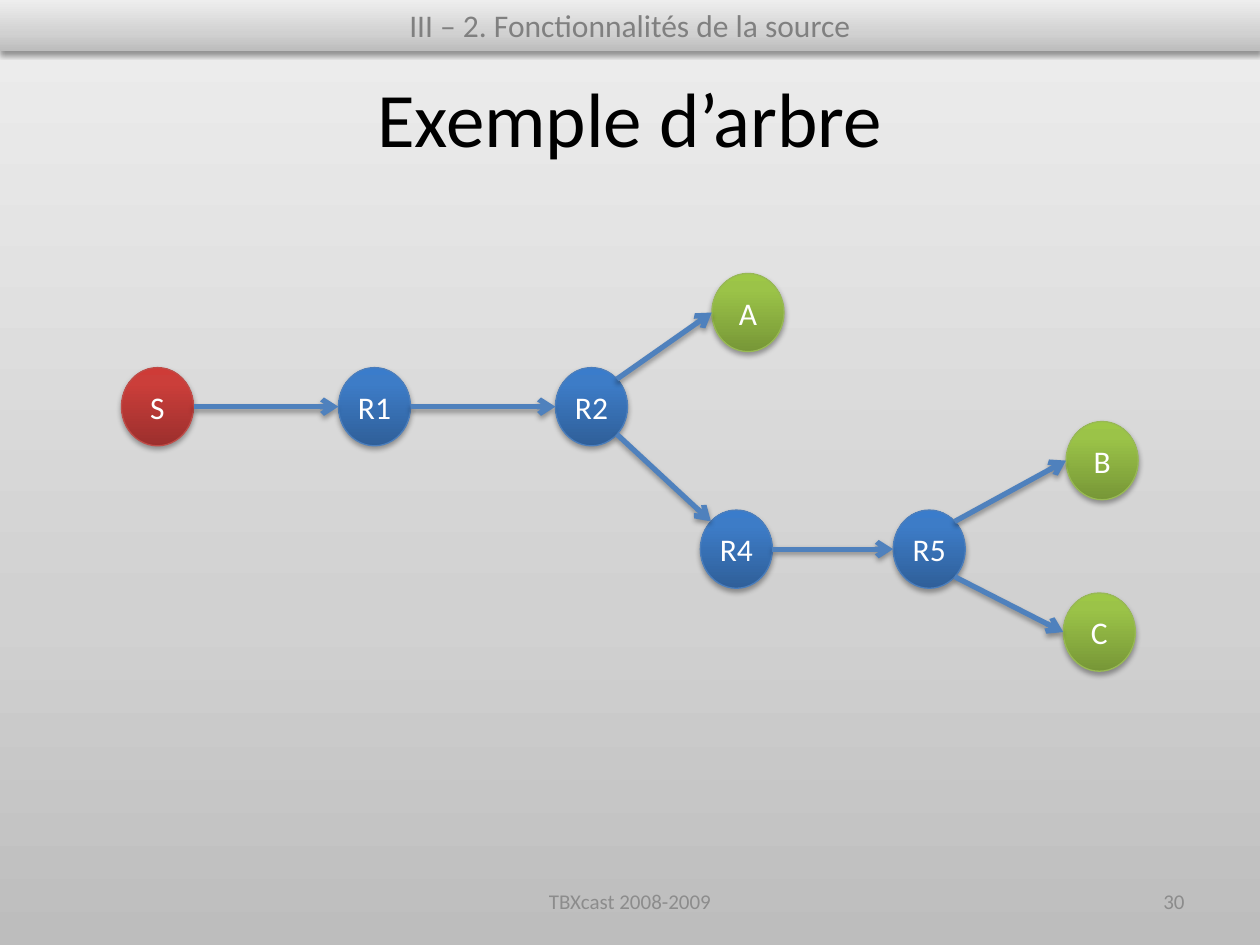
from copy import deepcopy
from math import cos, radians, sin

from lxml.etree import SubElement
from pptx import Presentation
from pptx.dml.color import RGBColor
from pptx.enum.shapes import MSO_CONNECTOR, MSO_SHAPE
from pptx.enum.text import MSO_ANCHOR, MSO_AUTO_SIZE, PP_ALIGN
from pptx.oxml.ns import qn
from pptx.util import Pt

COLORS = {
    "title": "000000", "footer": "8C8C8C", "header": "808080",
    "node text": "FFFFFF", "arrow": "4F81BD", "shadow": "000000",
    "source line": "BF4C48", "router line": "4B7EBC", "receiver line": "98B955",
}
# Gradient stops run from the bottom up: position in percent, color
GRADIENTS = {
    "grey": [(0, "BDBDBD"), (35, "D1D1D1"), (100, "EEEEEE")],
    "source": [(0, "9C2F2D"), (80, "CB3E3A"), (100, "CE3B37")],
    "router": [(0, "2F5F99"), (80, "3D7CC7"), (100, "3A7CCB")],
    "receiver": [(0, "779737"), (80, "9BC348"), (100, "9DC746")],
}


def write_text(shape, text, size, color, align=PP_ALIGN.CENTER,
               anchor=MSO_ANCHOR.MIDDLE, wrap=True):
    frame = shape.text_frame
    frame.text = text
    frame.word_wrap = wrap
    frame.vertical_anchor = anchor
    paragraph = frame.paragraphs[0]
    paragraph.alignment = align
    font = paragraph.runs[0].font
    font.name, font.size = "Calibri", Pt(size)
    font.color.rgb = RGBColor.from_string(COLORS[color])


def fill_gradient(fill, element, name):
    fill.gradient()
    fill.gradient_angle = 90
    stop_list = element.xpath(".//a:gsLst")[0]
    stop_list.append(deepcopy(stop_list[-1]))
    for stop, (position, color) in zip(fill.gradient_stops, GRADIENTS[name]):
        stop.position = position / 100
        stop.color.rgb = RGBColor.from_string(color)


presentation = Presentation()
presentation.slide_width, presentation.slide_height = Pt(720), Pt(540)
slide = presentation.slides.add_slide(presentation.slide_layouts[5])
fill_gradient(slide.background.fill, slide.element, "grey")

# Title
title = slide.shapes.title
title.left, title.top, title.width, title.height = Pt(36), Pt(21.6), Pt(648), Pt(90)
write_text(title, "Exemple d’arbre", 44, "title")

# Footer and slide number
for text, left, width, align in [
    ("TBXcast 2008-2009", 246, 228, PP_ALIGN.CENTER),
    ("30", 516, 168, PP_ALIGN.RIGHT),
]:
    box = slide.shapes.add_textbox(Pt(left), Pt(500.5), Pt(width), Pt(28.75))
    write_text(box, text, 12, "footer", align=align)

# Tree nodes: kind and center
NODE_WIDTH, NODE_HEIGHT = 41.2, 44.7
nodes = {
    "S": ("source", 90, 232.4),
    "R1": ("router", 214, 232.4),
    "R2": ("router", 338, 232.4),
    "R4": ("router", 420.8, 313.8),
    "R5": ("router", 531, 313.8),
    "A": ("receiver", 427.4, 178.6),
    "B": ("receiver", 629.8, 263.2),
    "C": ("receiver", 628.2, 361.2),
}
shadowed = []
for name, (kind, x, y) in nodes.items():
    node = slide.shapes.add_shape(
        MSO_SHAPE.OVAL, Pt(x - NODE_WIDTH / 2), Pt(y - NODE_HEIGHT / 2),
        Pt(NODE_WIDTH), Pt(NODE_HEIGHT))
    fill_gradient(node.fill, node.element, kind)
    node.line.color.rgb = RGBColor.from_string(COLORS[f"{kind} line"])
    node.line.width = Pt(0.75)
    node.text_frame.margin_left = node.text_frame.margin_right = 0
    write_text(node, name, 18, "node text", wrap=False)
    shadowed.append((node, 35))

# Arrows: each end sits on its oval at a clockwise angle from the right
for start, start_angle, end, end_angle in [
    ("S", 0, "R1", 180), ("R1", 0, "R2", 180), ("R2", -45, "A", 180),
    ("R4", 0, "R5", 180), ("R5", -45, "B", 180), ("R2", 45, "R4", 225),
    ("R5", 45, "C", 180),
]:
    points = []
    for name, angle in [(start, start_angle), (end, end_angle)]:
        kind, x, y = nodes[name]
        points += [Pt(x + NODE_WIDTH / 2 * cos(radians(angle))),
                   Pt(y + NODE_HEIGHT / 2 * sin(radians(angle)))]
    arrow = slide.shapes.add_connector(MSO_CONNECTOR.STRAIGHT, *points)
    arrow.line.color.rgb = RGBColor.from_string(COLORS["arrow"])
    arrow.line.width = Pt(3)
    SubElement(arrow.element.xpath(".//a:ln")[0], qn("a:tailEnd"), type="arrow")
    shadowed.append((arrow, 35))

# Header bar
header = slide.shapes.add_shape(MSO_SHAPE.RECTANGLE, 0, 0, Pt(720), Pt(29))
fill_gradient(header.fill, header.element, "grey")
header.line.fill.background()
write_text(header, "III – 2. Fonctionnalités de la source", 18, "header",
           anchor=MSO_ANCHOR.TOP)
header.text_frame.auto_size = MSO_AUTO_SIZE.SHAPE_TO_FIT_TEXT
shadowed.append((header, 38))

# Soft shadows below nodes, arrows and header
for shape, opacity in shadowed:
    effects = SubElement(shape.element.xpath("p:spPr")[0], qn("a:effectLst"))
    shadow = SubElement(effects, qn("a:outerShdw"), blurRad=str(Pt(3.1)),
                        dist=str(Pt(1.8)), dir="5400000", rotWithShape="0")
    color = SubElement(shadow, qn("a:srgbClr"), val=COLORS["shadow"])
    SubElement(color, qn("a:alpha"), val=str(opacity * 1000))

presentation.save("out.pptx")
